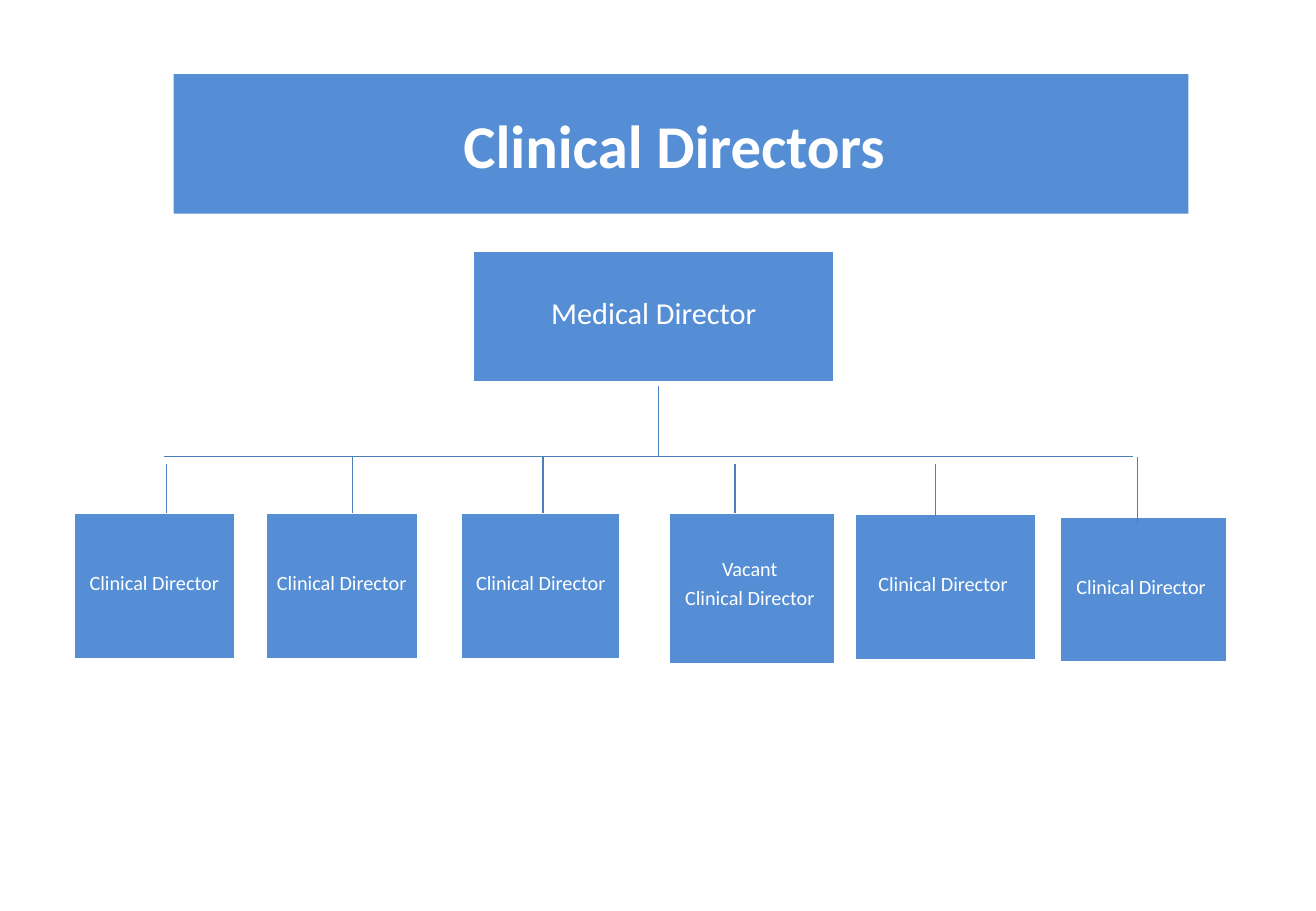
"""Build the organisation chart of the clinical directors."""
from lxml.etree import SubElement
from pptx import Presentation
from pptx.dml.color import RGBColor
from pptx.enum.shapes import MSO_CONNECTOR, MSO_SHAPE
from pptx.enum.text import MSO_ANCHOR, PP_ALIGN
from pptx.oxml.ns import qn
from pptx.util import Inches, Pt

paint = RGBColor.from_string
BLUE, WHITE, WIRE = "558ED5", "FFFFFF", "4B7EBC"

deck = Presentation()
deck.slide_width, deck.slide_height = Inches(10.83), Inches(7.5)
wide, high = deck.slide_width / 100, deck.slide_height / 100
slide = deck.slides.add_slide(deck.slide_layouts[6])


def box(left, top, width, height, lines, size, inset, edge=True, bold=False):
    """Draw a blue box with centred lines, placed in percent of the slide."""
    shape = slide.shapes.add_shape(
        MSO_SHAPE.RECTANGLE, int(left * wide), int(top * high),
        int(width * wide), int(height * high))
    shape.shadow.inherit = False
    shape.fill.solid()
    shape.fill.fore_color.rgb = paint(BLUE)
    if edge:
        shape.line.color.rgb = paint(WHITE)
        shape.line.width = Pt(2)
    else:
        shape.line.fill.background()
    frame = shape.text_frame
    frame.word_wrap = True
    frame.vertical_anchor = MSO_ANCHOR.MIDDLE
    side, above, below = inset
    frame.margin_left = frame.margin_right = Inches(side)
    frame.margin_top, frame.margin_bottom = Inches(above), Inches(below)
    for row, line in enumerate(lines):
        para = frame.add_paragraph() if row else frame.paragraphs[0]
        para.alignment = PP_ALIGN.CENTER
        if len(lines) > 1:
            para.line_spacing = 0.9
            para.space_after = Pt(4.2 if row < len(lines) - 1 else 0)
        run = para.add_run()
        run.text = line
        run.font.name, run.font.size, run.font.bold = "Calibri", Pt(size), bold
        run.font.color.rgb = paint(WHITE)


def link(x1, y1, x2, y2):
    """Draw a thin line between two points in percent of the slide."""
    wire = slide.shapes.add_connector(
        MSO_CONNECTOR.STRAIGHT, int(x1 * wide), int(y1 * high),
        int(x2 * wide), int(y2 * high))
    wire.line.color.rgb = paint(WIRE)
    wire.line.width = Pt(0.75)
    SubElement(wire._element.spPr, qn("a:effectLst"))


box(13.2, 8.13, 77.1, 15.33, ["Clinical Directors "], 36,
    (0.1, 0.05, 0.05), edge=False, bold=True)
box(35.92, 27.47, 27.52, 14.53, ["Medical Director"], 18, (0.1, 0.05, 0.11))

RAIL, GAP, ROW, TALL = 50.13, 50.93, 56.27, 16.13
role = "Clinical Director"
staff = [
    (5.54, ROW, 12.37, TALL, [role], 12.65, GAP, ROW),
    (20.13, ROW, 11.68, TALL, [role], 26.78, RAIL, ROW),
    (35, ROW, 12.19, TALL, [role], 41.27, RAIL, ROW),
    (50.78, ROW, 12.74, 16.67, ["Vacant ", role + " "], 55.86, GAP, ROW),
    (64.91, 56.4, 13.85, TALL, [role + " "], 71.1, GAP, 56.67),
    (80.52, 56.67, 12.74, TALL, [role + " "], 86.43, RAIL, 57.47),
]
for left, top, width, height, lines, stem, start, end in staff:
    box(left, top, width, height, lines, 12, (0.01, 0.01, 0.07))
    link(stem, start, stem, end)

link(50.05, 42.4, 50.05, 50)
link(12.47, RAIL, 86.06, RAIL)

deck.save("out.pptx")
